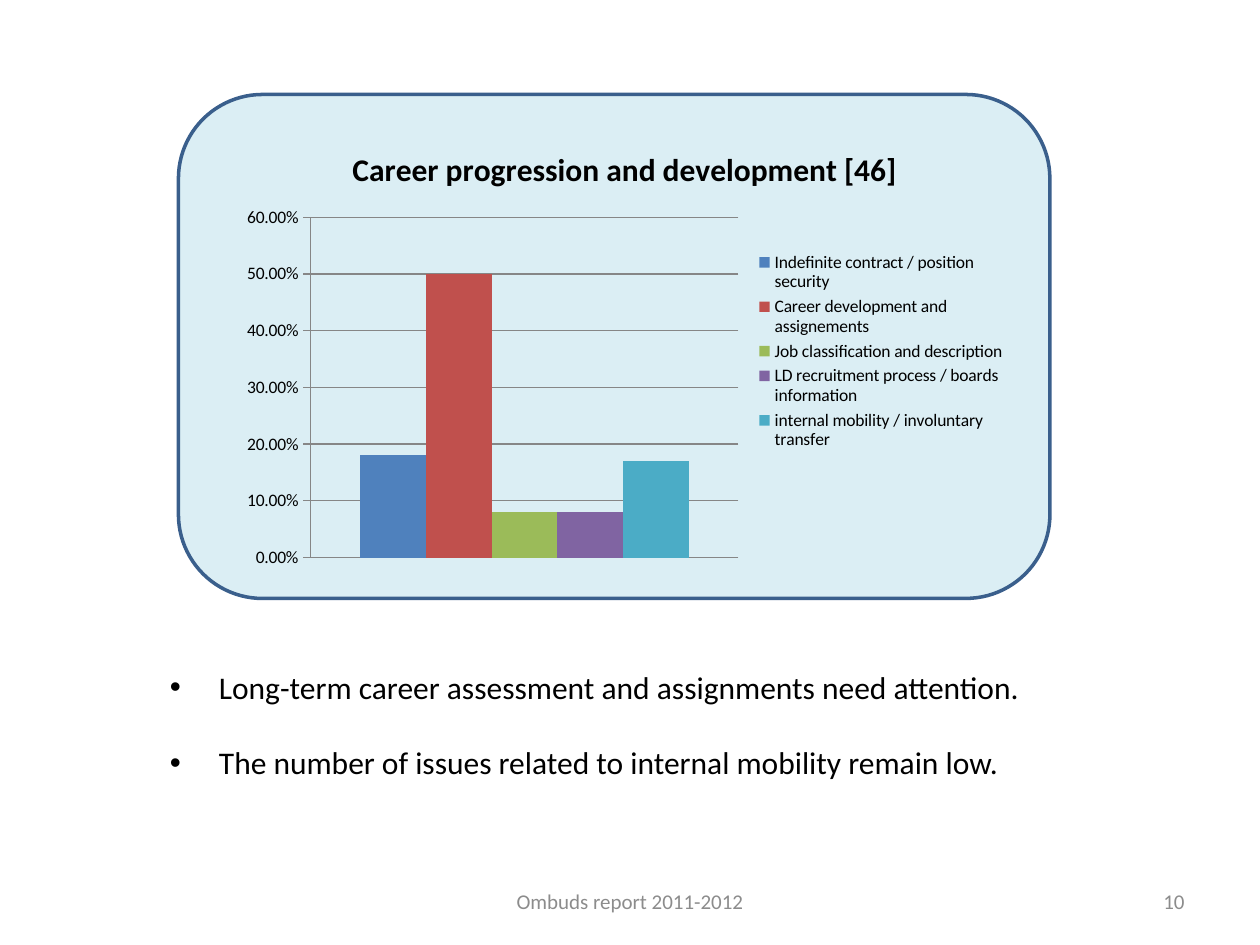
from lxml import etree
from pptx import Presentation
from pptx.chart.data import CategoryChartData
from pptx.dml.color import RGBColor
from pptx.enum.chart import XL_CHART_TYPE, XL_LEGEND_POSITION, XL_TICK_LABEL_POSITION, XL_TICK_MARK
from pptx.enum.shapes import MSO_SHAPE
from pptx.enum.text import MSO_ANCHOR, PP_ALIGN
from pptx.oxml.ns import qn
from pptx.util import Pt

COLUMN = XL_CHART_TYPE.COLUMN_CLUSTERED
LEGEND_RIGHT = XL_LEGEND_POSITION.RIGHT
NO_LABELS = XL_TICK_LABEL_POSITION.NONE
TICK_OUT, TICK_NONE = XL_TICK_MARK.OUTSIDE, XL_TICK_MARK.NONE
ROUNDED = MSO_SHAPE.ROUNDED_RECTANGLE
TOP, MIDDLE = MSO_ANCHOR.TOP, MSO_ANCHOR.MIDDLE
LEFT, CENTER, RIGHT = PP_ALIGN.LEFT, PP_ALIGN.CENTER, PP_ALIGN.RIGHT

# Content
FONT = "Calibri"
COLORS = {"text": "000000", "footer": "8C8C8C", "panel": "DBEEF4",
          "border": "3A5F8C", "grid": "868686"}
CHART_TITLE = "Career progression and development [46]"
SERIES = [
    ("Indefinite contract / position security", 0.18, "4F81BD"),
    ("Career development and assignements", 0.5, "C0504D"),
    ("Job classification and description", 0.08, "9BBB59"),
    ("LD recruitment process / boards information", 0.08, "8064A2"),
    ("internal mobility / involuntary transfer", 0.17, "4BACC6"),
]
BULLETS = [
    "Long-term career assessment and assignments need attention.",
    "The number of issues related to internal mobility remain low.",
]
FOOTER, PAGE_NUMBER = "Ombuds report 2011-2012", "10"

# Boxes: left, top, width, height in points
PANEL_BOX = (102, 54, 498, 288)
CHART_BOX = (132, 72, 450, 258)
PLOT_BOX = (177.5, 124.2, 244.5, 194.5)
LEGEND_BOX = (429, 141.4, 148.5, 118.7)
BULLET_BOX = (90, 378, 528, 73)
FOOTER_BOX = (246, 500.5, 228, 28.75)
NUMBER_BOX = (516, 500.5, 168, 28.75)
BULLET_INDENT = 28


def rgb(name):
    return RGBColor.from_string(COLORS.get(name, name))


def points(box):
    return [Pt(length) for length in box]


def format_font(font, size, color="text", bold=False):
    font.name, font.size, font.bold = FONT, Pt(size), bold
    font.color.rgb = rgb(color)


def add_text(slide, box, lines, size=12, color="text", align=LEFT,
             anchor=TOP, bullet=False, gap=0):
    frame = slide.shapes.add_textbox(*points(box)).text_frame
    frame.word_wrap = True
    frame.vertical_anchor = anchor
    for index, line in enumerate(lines):
        paragraph = frame.paragraphs[0] if index == 0 else frame.add_paragraph()
        paragraph.alignment = align
        paragraph.space_before = Pt(gap if index else 0)
        run = paragraph.add_run()
        run.text = line
        format_font(run.font, size, color)
        if bullet:
            properties = paragraph._p.get_or_add_pPr()
            properties.set("marL", str(Pt(BULLET_INDENT)))
            properties.set("indent", str(-Pt(BULLET_INDENT)))
            etree.SubElement(properties, qn("a:buFont")).set("typeface", "Arial")
            etree.SubElement(properties, qn("a:buChar")).set("char", "•")


def set_layout(element, position, box, inner=False):
    """Place a chart part by hand; the file holds fractions of the chart."""
    for old in element.findall(qn("c:layout")):
        element.remove(old)
    left, top, width, height = box
    chart_left, chart_top, chart_width, chart_height = CHART_BOX
    area = ((left - chart_left) / chart_width, (top - chart_top) / chart_height,
            width / chart_width, height / chart_height)
    layout = etree.Element(qn("c:layout"))
    manual = etree.SubElement(layout, qn("c:manualLayout"))
    values = [("layoutTarget", "inner")] if inner else []
    values += [("xMode", "edge"), ("yMode", "edge"), *zip("xywh", area)]
    for tag, value in values:
        etree.SubElement(manual, qn("c:" + tag)).set("val", str(value))
    element.insert(position, layout)


def add_column_chart(slide):
    data = CategoryChartData(number_format="0.00%")
    data.categories = ["1"]
    for name, value, _ in SERIES:
        data.add_series(name, [value])
    chart = slide.shapes.add_chart(COLUMN, *points(CHART_BOX), data).chart
    format_font(chart.font, 10)

    chart.has_title = True
    title = chart.chart_title
    title.include_in_layout = False
    title.text_frame.text = CHART_TITLE
    format_font(title.text_frame.paragraphs[0].runs[0].font, 18, bold=True)

    plot = chart.plots[0]
    plot.gap_width, plot.overlap = 150, 0
    plot.vary_by_categories = False
    for series, (_, _, color) in zip(plot.series, SERIES):
        series.format.fill.solid()
        series.format.fill.fore_color.rgb = rgb(color)

    category_axis, value_axis = chart.category_axis, chart.value_axis
    category_axis.tick_label_position = NO_LABELS
    category_axis.major_tick_mark = TICK_NONE
    value_axis.minimum_scale, value_axis.maximum_scale = 0, 0.6
    value_axis.major_unit = 0.1
    value_axis.major_tick_mark = TICK_OUT
    value_axis.has_major_gridlines = True
    value_axis.tick_labels.number_format = "0.00%"
    value_axis.tick_labels.number_format_is_linked = False
    for part in (category_axis, value_axis, value_axis.major_gridlines):
        part.format.line.color.rgb = rgb("grid")
        part.format.line.width = Pt(0.75)

    chart.has_legend = True
    legend = chart.legend
    legend.position = LEGEND_RIGHT
    legend.include_in_layout = False
    format_font(legend.font, 10)
    set_layout(legend._element, 1, LEGEND_BOX)
    set_layout(chart._chartSpace.chart.plotArea, 0, PLOT_BOX, inner=True)


def main():
    presentation = Presentation()
    presentation.slide_width, presentation.slide_height = Pt(720), Pt(540)
    slide = presentation.slides.add_slide(presentation.slide_layouts[6])

    # Rounded panel behind the chart
    panel = slide.shapes.add_shape(ROUNDED, *points(PANEL_BOX))
    panel.shadow.inherit = False
    panel.fill.solid()
    panel.fill.fore_color.rgb = rgb("panel")
    panel.line.color.rgb = rgb("border")
    panel.line.width = Pt(2)

    add_column_chart(slide)

    # Findings and footer
    add_text(slide, BULLET_BOX, BULLETS, size=18, bullet=True, gap=21.6)
    add_text(slide, FOOTER_BOX, [FOOTER], color="footer", align=CENTER, anchor=MIDDLE)
    add_text(slide, NUMBER_BOX, [PAGE_NUMBER], color="footer", align=RIGHT, anchor=MIDDLE)

    presentation.save("out.pptx")


if __name__ == "__main__":
    main()
